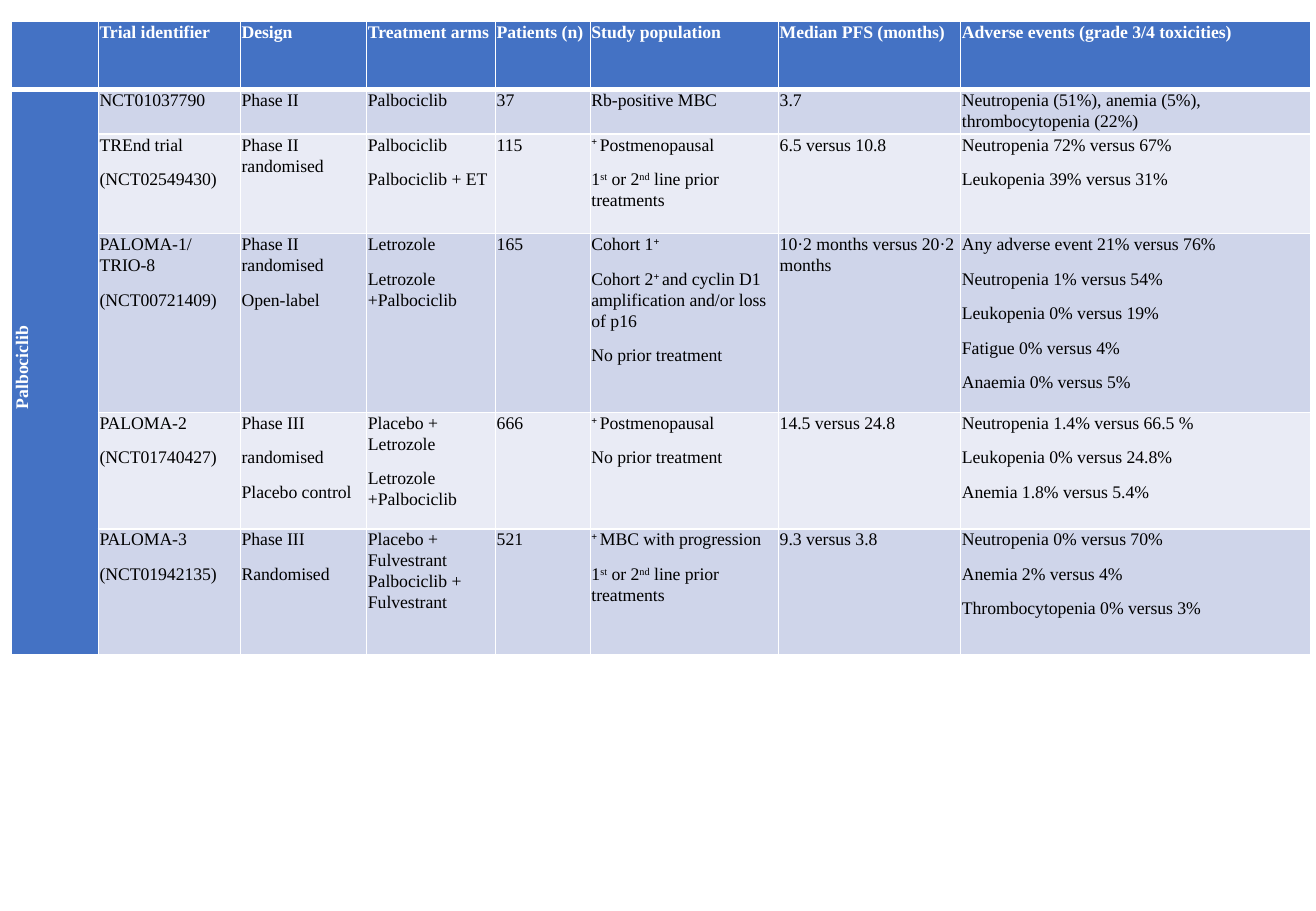
from lxml.etree import SubElement
from pptx import Presentation
from pptx.dml.color import RGBColor
from pptx.enum.text import MSO_ANCHOR, PP_ALIGN
from pptx.oxml.ns import qn
from pptx.util import Pt

BLUE, WHITE, BLACK = "4472C4", "FFFFFF", "000000"
BANDS = "CFD5EA", "E9EBF5"
COLS = 51.84, 84.24, 74.88, 76.32, 56.16, 111.6, 108, 207.36
ROWS = 40.32, 26.64, 59.04, 105.84, 69.12, 74.88
TRIALS = [
    ["", "Trial identifier", "Design", "Treatment arms", "Patients (n)",
     "Study population", "Median PFS (months)",
     "Adverse events (grade 3/4 toxicities)"],
    ["Palbociclib", "NCT01037790", "Phase II", "Palbociclib", "37",
     "Rb-positive MBC", "3.7",
     "Neutropenia (51%), anemia (5%), thrombocytopenia (22%)"],
    ["", "TREnd trial;(NCT02549430)", "Phase II randomised",
     "Palbociclib;Palbociclib + ET", "115",
     "|+ |Postmenopausal;1|st| or 2|nd| line prior treatments",
     "6.5 versus 10.8",
     "Neutropenia 72% versus 67%;Leukopenia 39% versus 31%"],
    ["", "PALOMA-1/TRIO-8;(NCT00721409)", "Phase II randomised;Open-label",
     "Letrozole;Letrozole +Palbociclib", "165",
     "Cohort 1|+|;Cohort 2|+ |and cyclin D1 amplification and/or loss of p16"
     ";No prior treatment",
     "10·2 months versus 20·2 months",
     "Any adverse event 21% versus 76%;Neutropenia 1% versus 54%;"
     "Leukopenia 0% versus 19%;Fatigue 0% versus 4%;Anaemia 0% versus 5%"],
    ["", "PALOMA-2;(NCT01740427)", "Phase III;randomised;Placebo control",
     "Placebo + Letrozole;Letrozole +Palbociclib", "666",
     "|+ |Postmenopausal;No prior treatment", "14.5 versus 24.8",
     "Neutropenia 1.4% versus 66.5 %;Leukopenia 0% versus 24.8%;"
     "Anemia 1.8% versus 5.4%"],
    ["", "PALOMA-3;(NCT01942135)", "Phase III;Randomised",
     "Placebo + Fulvestrant Palbociclib + Fulvestrant", "521",
     "|+ |MBC with progression;1|st| or 2|nd| line prior treatments",
     "9.3 versus 3.8",
     "Neutropenia 0% versus 70%;Anemia 2% versus 4%;"
     "Thrombocytopenia 0% versus 3%"],
]


def tint(fill, code):
    """Make a fill solid in a hex colour."""
    fill.solid()
    fill.fore_color.rgb = RGBColor.from_string(code)


def edge(cell, row):
    """Draw white cell borders, with a thick rule under the header."""
    props = cell._tc.get_or_add_tcPr()
    for side in "LRTB":
        thick = (row, side) in ((0, "B"), (1, "T"))
        line = SubElement(props, qn(f"a:ln{side}"), w=str(Pt(3 if thick else 1)))
        paint = SubElement(line, qn("a:solidFill"))
        SubElement(paint, qn("a:srgbClr"), val=WHITE)


def write(cell, text, color, bold):
    """Write paragraphs split at semicolons, with raised runs between bars."""
    frame = cell.text_frame
    for i, part in enumerate(text.split(";")):
        para = frame.add_paragraph() if i else frame.paragraphs[0]
        para.line_spacing = 1.07
        para.space_after = Pt(8)
        para.font.size = Pt(10.5)
        for j, piece in enumerate(part.split("|")):
            if not piece:
                continue
            run = para.add_run()
            run.text = piece
            font = run.font
            font.name = "Times New Roman"
            font.size = Pt(10.5)
            raised = j % 2 == 1
            font.bold = bold or (raised and "+" in piece)
            tint(font.fill, color)
            if raised:
                font._element.set("baseline", "30000")


def turn(cell):
    """Turn the drug label to read upwards in the centre of its cell."""
    cell._tc.get_or_add_tcPr().set("vert", "vert270")
    cell.vertical_anchor = MSO_ANCHOR.MIDDLE
    para = cell.text_frame.paragraphs[0]
    para.alignment = PP_ALIGN.CENTER
    para._p.get_or_add_pPr().set("marL", str(Pt(5.65)))


def grid(slide, left, top):
    """Place the table of trials with its corner at left, top."""
    table = slide.shapes.add_table(
        len(ROWS), len(COLS), Pt(left), Pt(top), Pt(sum(COLS)), Pt(sum(ROWS))
    ).table
    for col, width in zip(table.columns, COLS):
        col.width = Pt(width)
    for r, (high, texts) in enumerate(zip(ROWS, TRIALS)):
        table.rows[r].height = Pt(high)
        for c, text in enumerate(texts):
            cell = table.cell(r, c)
            head = r == 0 or c == 0
            cell.margin_left = cell.margin_right = Pt(0.72)
            cell.margin_top = cell.margin_bottom = 0
            edge(cell, r)
            tint(cell.fill, BLUE if head else BANDS[(r - 1) % 2])
            write(cell, text, WHITE if head else BLACK, head)
    label = table.cell(1, 0)
    label.merge(table.cell(len(ROWS) - 1, 0))
    turn(label)


def main():
    """Build and save the slide."""
    deck = Presentation()
    deck.slide_width, deck.slide_height = Pt(780), Pt(540)
    slide = deck.slides.add_slide(deck.slide_layouts[6])
    grid(slide, 6.48, 12.6)
    deck.save("out.pptx")


if __name__ == "__main__":
    main()
